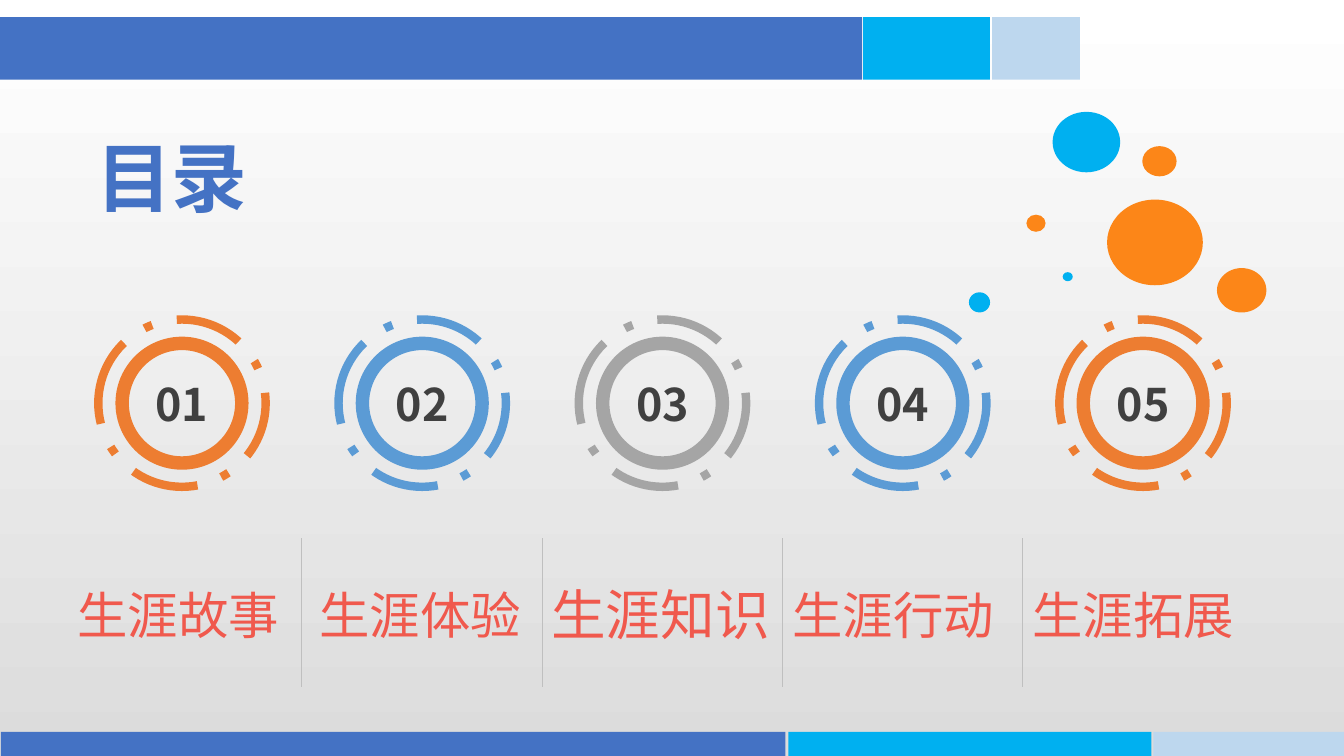
from dataclasses import dataclass

from lxml import etree
from pptx import Presentation
from pptx.dml.color import RGBColor
from pptx.enum.dml import MSO_LINE
from pptx.enum.lang import MSO_LANGUAGE_ID
from pptx.enum.shapes import MSO_CONNECTOR, MSO_SHAPE
from pptx.enum.text import MSO_ANCHOR, MSO_AUTO_SIZE, PP_ALIGN
from pptx.oxml.ns import qn
from pptx.util import Inches, Pt

RECTANGLE, OVAL, DONUT = MSO_SHAPE.RECTANGLE, MSO_SHAPE.OVAL, MSO_SHAPE.DONUT
STRAIGHT = MSO_CONNECTOR.STRAIGHT
LEFT, CENTER, MIDDLE = PP_ALIGN.LEFT, PP_ALIGN.CENTER, MSO_ANCHOR.MIDDLE
CHINESE = MSO_LANGUAGE_ID.SIMPLIFIED_CHINESE


@dataclass(frozen=True)
class Theme:
    navy: str = "4472C4"
    cyan: str = "00B0F0"
    pale: str = "BDD7EE"
    bubble: str = "FC8618"
    orange: str = "ED7D31"
    blue: str = "5B9BD5"
    gray: str = "A5A5A5"
    number: str = "404040"
    label: str = "F0594D"
    divider: str = "BFBFBF"
    background: tuple = ("FFFFFF", "DCDCDC")
    heading_font: str = "Noto Sans CJK SC"
    label_font: str = "Arial"
    title_size: int = 54
    number_size: int = 32
    label_size: int = 36
    middle_label_size: int = 39


THEME = Theme()
WIDTH, HEIGHT = 13.33, 7.5

TITLE = "目录"
# label, ring colour, label left, label width, label size
CHAPTERS = [
    ("生涯故事", THEME.orange, 0.67, 2.45, THEME.label_size),
    ("生涯体验", THEME.blue, 3.07, 2.5, THEME.label_size),
    ("生涯知识", THEME.gray, 5.37, 2.38, THEME.middle_label_size),
    ("生涯行动", THEME.blue, 7.76, 2.25, THEME.label_size),
    ("生涯拓展", THEME.orange, 10.14, 2.23, THEME.label_size),
]
# top, height, segments of (left, width, colour)
BANDS = [
    (0.17, 0.62, [(0, 8.55, THEME.navy), (8.56, 1.26, THEME.cyan),
                  (9.84, 0.87, THEME.pale)]),
    (7.26, 0.24, [(0.01, 7.78, THEME.navy), (7.82, 3.6, THEME.cyan),
                  (11.44, 1.89, THEME.pale)]),
]
# left, top, width, height, colour
BUBBLES = [
    (9.61, 2.9, 0.21, 0.2, THEME.cyan),
    (10.98, 1.98, 0.95, 0.85, THEME.bubble),
    (10.44, 1.11, 0.67, 0.6, THEME.cyan),
    (12.07, 2.66, 0.49, 0.44, THEME.bubble),
    (11.33, 1.45, 0.34, 0.3, THEME.bubble),
    (10.18, 2.13, 0.19, 0.17, THEME.bubble),
    (10.54, 2.7, 0.1, 0.09, THEME.cyan),
]
COLUMN_STEP = 2.383
FIRST_CENTER, RING_MIDDLE = 1.805, 4.0
DONUT_SIZE, ORBIT_SIZE = 1.32, 1.66
FIRST_DIVIDER, DIVIDER_TOP, DIVIDER_BOTTOM = 2.99, 5.34, 6.82
LABEL_TOP, LABEL_HEIGHT = 5.64, 0.9


def rgb(color):
    return RGBColor.from_string(color)


def add_filled(slide, kind, left, top, width, height, color=None):
    shape = slide.shapes.add_shape(
        kind, Inches(left), Inches(top), Inches(width), Inches(height))
    shape.shadow.inherit = False
    shape.line.fill.background()
    if color:
        shape.fill.solid()
        shape.fill.fore_color.rgb = rgb(color)
    else:
        shape.fill.background()
    return shape


def write(shape, text, font, size, color, bold=False, align=CENTER):
    frame = shape.text_frame
    frame.text = text
    frame.word_wrap = True
    frame.auto_size = MSO_AUTO_SIZE.NONE
    frame.vertical_anchor = MIDDLE
    para = frame.paragraphs[0]
    para.alignment = align
    span = para.runs[0]
    span.font.name, span.font.size, span.font.bold = font, Pt(size), bold
    span.font.color.rgb = rgb(color)
    span.font.language_id = CHINESE
    latin = span.font._element.find(qn("a:latin"))
    east_asian = etree.Element(qn("a:ea"), typeface=font)
    latin.addnext(east_asian)
    return para


def add_ring(slide, center, number, color):
    """Numbered donut inside a dashed circle."""
    def square(kind, size, fill=None):
        return add_filled(slide, kind, center - size / 2,
                          RING_MIDDLE - size / 2, size, size, fill)

    donut = square(DONUT, DONUT_SIZE, color)
    donut.adjustments[0] = 0.101
    write(donut, f"{number:02d}", THEME.heading_font, THEME.number_size,
          THEME.number, bold=True)
    orbit = square(OVAL, ORBIT_SIZE)
    orbit.line.color.rgb = rgb(color)
    orbit.line.width = Pt(6)
    orbit.line.dash_style = MSO_LINE.LONG_DASH_DOT


def add_divider(slide, x):
    divider = slide.shapes.add_connector(
        STRAIGHT, Inches(x), Inches(DIVIDER_TOP),
        Inches(x), Inches(DIVIDER_BOTTOM))
    divider.line.color.rgb = rgb(THEME.divider)
    divider.line.width = Pt(0.25)
    etree.SubElement(divider._element.spPr, qn("a:effectLst"))


def add_label(slide, text, left, width, size):
    box = slide.shapes.add_textbox(
        Inches(left), Inches(LABEL_TOP), Inches(width), Inches(LABEL_HEIGHT))
    write(box, text, THEME.label_font, size, THEME.label, align=LEFT)
    box.text_frame.margin_right = 0


def main():
    deck = Presentation()
    deck.slide_width, deck.slide_height = Inches(WIDTH), Inches(HEIGHT)
    page = deck.slides.add_slide(deck.slide_layouts.get_by_name("Title Only"))

    backdrop = page.background.fill
    backdrop.gradient()
    backdrop.gradient_angle = 270
    for stop, color, position in zip(
            backdrop.gradient_stops, THEME.background, (0, 1)):
        stop.color.rgb = rgb(color)
        stop.position = position

    for top, height, segments in BANDS:
        for left, width, color in segments:
            add_filled(page, RECTANGLE, left, top, width, height, color)
    for bubble in BUBBLES:
        add_filled(page, OVAL, *bubble)

    title = page.shapes.title
    title.left, title.top = Inches(0.34), Inches(1.3)
    title.width, title.height = Inches(2.73), Inches(1.02)
    heading = write(title, TITLE, THEME.heading_font, THEME.title_size,
                    THEME.navy, bold=True)
    heading.line_spacing = 0.9

    for index, (label, color, left, width, size) in enumerate(CHAPTERS):
        add_ring(page, FIRST_CENTER + index * COLUMN_STEP, index + 1, color)
        if index < len(CHAPTERS) - 1:
            add_divider(page, FIRST_DIVIDER + index * COLUMN_STEP)
        add_label(page, label, left, width, size)

    deck.save("out.pptx")


if __name__ == "__main__":
    main()
